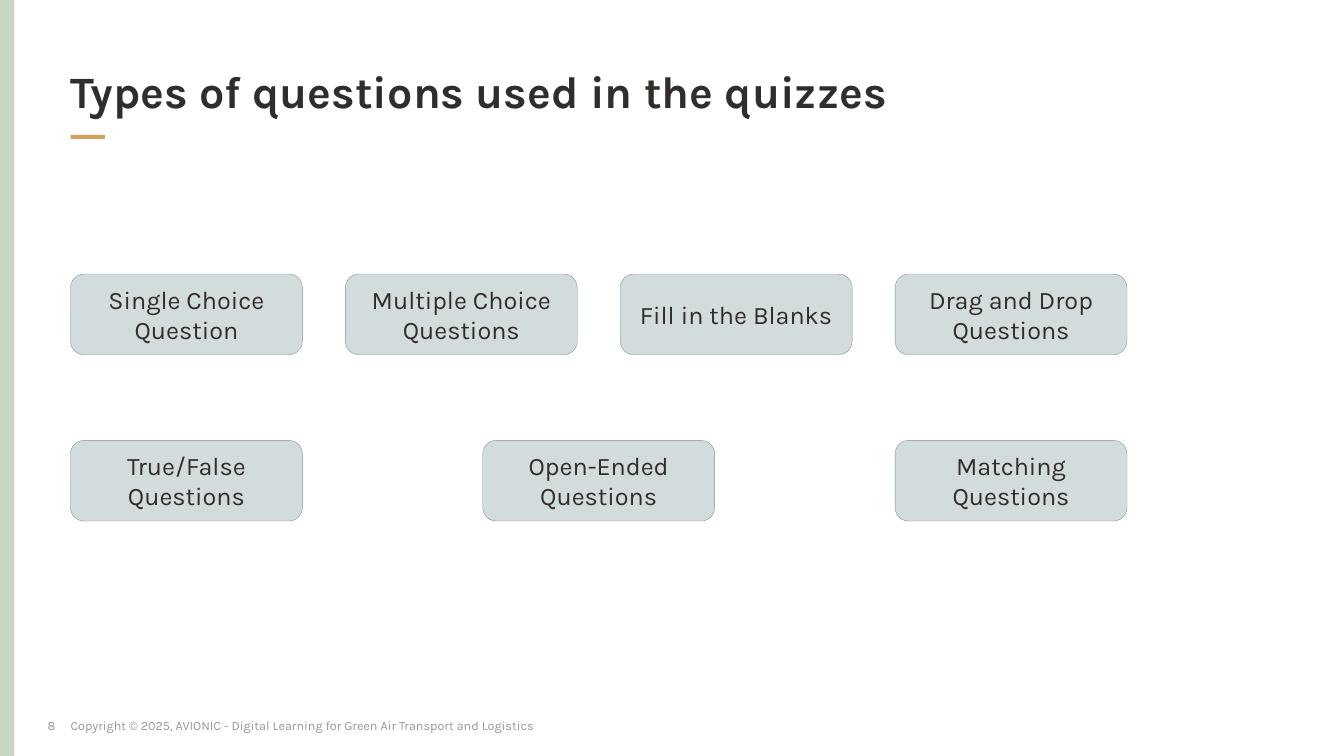
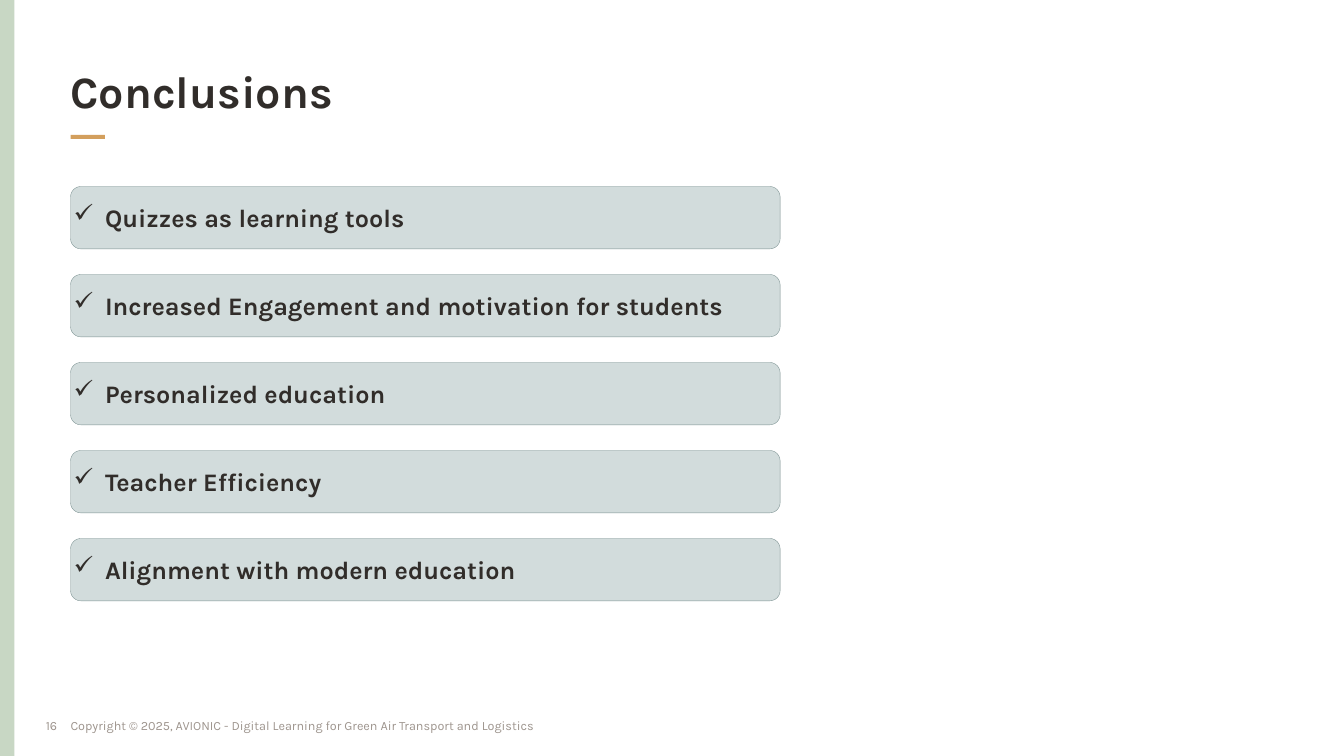
from dataclasses import dataclass

from lxml import etree
from pptx import Presentation
from pptx.dml.color import RGBColor
from pptx.enum import shapes, text
from pptx.oxml import ns
from pptx.util import Pt


@dataclass(frozen=True)
class Theme:
    font: str = "Karla"
    ink: str = "312D2A"
    muted: str = "9E958E"
    band: str = "C8D7C4"
    accent: str = "D39F5D"
    card: str = "D2DCDC"
    outline: str = "7B9191"
    title_size: float = 32
    body_size: float = 18
    footer_size: float = 9
    margin: float = 50.4


@dataclass(frozen=True)
class Box:
    left: float
    top: float
    width: float
    height: float

    def lengths(self):
        return [Pt(round(v, 2)) for v in (self.left, self.top, self.width, self.height)]


THEME = Theme()
SLIDE = Box(0, 0, 960, 540)
COPYRIGHT = "Copyright © 2025, AVIONIC - Digital Learning for Green Air Transport and Logistics"
QUESTION_ROWS = [
    ["Single Choice Question", "Multiple Choice Questions", "Fill in the Blanks", "Drag and Drop Questions"],
    ["True/False Questions", "Open-Ended Questions", "Matching Questions"],
]
CONCLUSIONS = [
    "Quizzes as learning tools",
    "Increased Engagement and motivation for students",
    "Personalized education",
    "Teacher Efficiency",
    "Alignment with modern education",
]


def write(shape, words, size, color=THEME.ink, bold=False, align=text.PP_ALIGN.LEFT,
          anchor=text.MSO_ANCHOR.MIDDLE, inset=0):
    frame = shape.text_frame
    frame.text = words
    frame.word_wrap = True
    frame.auto_size = text.MSO_AUTO_SIZE.NONE
    frame.vertical_anchor = anchor
    frame.margin_left = frame.margin_right = Pt(inset)
    frame.margin_top = frame.margin_bottom = Pt(inset / 2)
    paragraph = frame.paragraphs[0]
    paragraph.alignment = align
    for run in paragraph.runs:
        run.font.name = THEME.font
        run.font.size = Pt(size)
        run.font.bold = bold
        run.font.color.rgb = RGBColor.from_string(color)
    return paragraph


def add_block(slide, box, fill, outline=None, kind=shapes.MSO_SHAPE.RECTANGLE):
    block = slide.shapes.add_shape(kind, *box.lengths())
    block.shadow.inherit = False
    block.fill.solid()
    block.fill.fore_color.rgb = RGBColor.from_string(fill)
    if outline:
        block.line.color.rgb = RGBColor.from_string(outline)
        block.line.width = Pt(0.25)
    else:
        block.line.fill.background()
    return block


def add_card(slide, box):
    return add_block(slide, box, THEME.card, THEME.outline, shapes.MSO_SHAPE.ROUNDED_RECTANGLE)


def add_footer(slide, box, number):
    number_width = 28.8
    page = slide.shapes.add_textbox(*Box(box.left - 28, box.top, number_width, box.height).lengths())
    write(page, str(number), THEME.footer_size, THEME.muted, align=text.PP_ALIGN.CENTER)
    notice = slide.shapes.add_textbox(*box.lengths())
    write(notice, COPYRIGHT, THEME.footer_size, THEME.muted)


def add_title(slide, box, words):
    title = slide.shapes.title
    title.left, title.top, title.width, title.height = box.lengths()
    paragraph = write(title, words, THEME.title_size, bold=True, anchor=text.MSO_ANCHOR.BOTTOM)
    paragraph.line_spacing = 0.95
    add_block(slide, Box(box.left, box.top + box.height + 11.3, 24.5, 2.9), THEME.accent)


def start_slide(deck, words, number):
    layout = deck.slide_layouts.get_by_name("Title Only")
    slide = deck.slides.add_slide(layout)
    add_block(slide, Box(0, 0, 10.3, SLIDE.height), THEME.band)
    add_footer(slide, Box(THEME.margin, 504, 452, 28.8), number)
    add_title(slide, Box(THEME.margin, 20.2, 865.4, 64.8), words)
    return slide


def add_question_grid(slide, box, rows):
    width, height = 165.6, 57.6
    row_step = (box.height - height) / (len(rows) - 1)
    for row, labels in enumerate(rows):
        column_step = (box.width - width) / (len(labels) - 1)
        for column, label in enumerate(labels):
            card = add_card(slide, Box(box.left + column * column_step,
                                       box.top + row * row_step, width, height))
            write(card, label, THEME.body_size, align=text.PP_ALIGN.CENTER, inset=7.2)


def add_check(paragraph, indent):
    properties = paragraph._p.get_or_add_pPr()
    properties.set("marL", str(Pt(indent)))
    properties.set("indent", str(-Pt(indent)))
    etree.SubElement(properties, ns.qn("a:buChar")).set("char", "✓")


def add_checklist(slide, box, points):
    height = 44.6
    step = (box.height - height) / (len(points) - 1)
    for index, point in enumerate(points):
        bar = add_card(slide, Box(box.left, box.top + index * step, box.width, height))
        add_check(write(bar, point, THEME.body_size, bold=True), 22.5)


def main():
    deck = Presentation()
    deck.slide_width, deck.slide_height = Pt(SLIDE.width), Pt(SLIDE.height)
    questions = start_slide(deck, "Types of questions used in the quizzes", 8)
    add_question_grid(questions, Box(THEME.margin, 195.8, 754.6, 176.4), QUESTION_ROWS)
    conclusions = start_slide(deck, "Conclusions", 16)
    add_checklist(conclusions, Box(THEME.margin, 133.2, 506.9, 296), CONCLUSIONS)
    deck.save("out.pptx")


if __name__ == "__main__":
    main()
